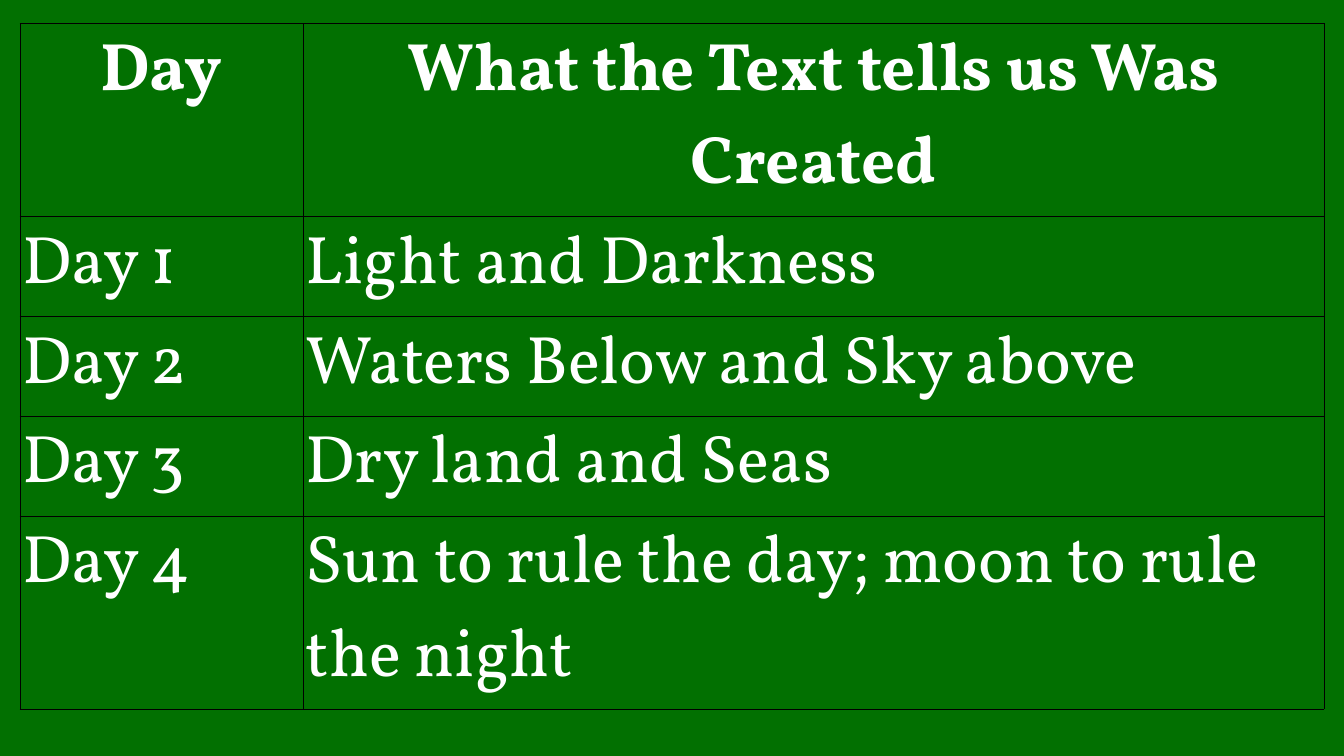
from dataclasses import dataclass

from lxml.etree import SubElement
from pptx import Presentation
from pptx.dml.color import RGBColor
from pptx.enum.text import PP_ALIGN
from pptx.oxml.ns import qn
from pptx.slide import Slide
from pptx.table import _Cell
from pptx.util import Inches, Pt


@dataclass(frozen=True)
class Theme:
    green: str = "027001"
    white: str = "FFFFFF"
    border: str = "000000"
    font: str = "Vollkorn"
    text_size: float = 96
    border_width: float = 0.35


@dataclass(frozen=True)
class DayRow:
    day: str
    created: str
    heading: bool = False


THEME = Theme()
ROWS = [
    DayRow("Day", "What the Text tells us Was Created", heading=True),
    DayRow("Day 1", "Light and Darkness"),
    DayRow("Day 2", "Waters Below and Sky above"),
    DayRow("Day 3", "Dry land and Seas"),
    DayRow("Day 4", "Sun to rule the day; moon to rule the night"),
]
COLUMN_WIDTHS = (5.62, 20.27)
ROW_HEIGHT = 1.85
CELL_MARGIN = 0.06


def draw_borders(cell: _Cell) -> None:
    properties = cell._tc.get_or_add_tcPr()
    for side in ("lnL", "lnR", "lnT", "lnB"):
        line = SubElement(properties, qn(f"a:{side}"), w=str(Pt(THEME.border_width)))
        fill = SubElement(line, qn("a:solidFill"))
        SubElement(fill, qn("a:srgbClr"), val=THEME.border)


def fill_cell(cell: _Cell, text: str, heading: bool) -> None:
    draw_borders(cell)
    cell.fill.solid()
    cell.fill.fore_color.rgb = RGBColor.from_string(THEME.green)
    for side in ("left", "right", "top", "bottom"):
        setattr(cell, f"margin_{side}", Inches(CELL_MARGIN))
    paragraph = cell.text_frame.paragraphs[0]
    paragraph.alignment = PP_ALIGN.CENTER if heading else PP_ALIGN.LEFT
    span = paragraph.add_run()
    span.text = text
    span.font.color.rgb = RGBColor.from_string(THEME.white)
    font_format = {"name": THEME.font, "size": Pt(THEME.text_size), "bold": heading}
    for name, value in font_format.items():
        setattr(span.font, name, value)


def draw_creation_table(page: Slide) -> None:
    table = page.shapes.add_table(
        len(ROWS), len(COLUMN_WIDTHS), Inches(0.39), Inches(0.46),
        Inches(sum(COLUMN_WIDTHS)), Inches(ROW_HEIGHT * len(ROWS)),
    ).table
    table.horz_banding = False
    for column, width in zip(table.columns, COLUMN_WIDTHS):
        column.width = Inches(width)
    for table_row, row in zip(table.rows, ROWS):
        table_row.height = Inches(ROW_HEIGHT)
        for cell, text in zip(table_row.cells, (row.day, row.created)):
            fill_cell(cell, text, row.heading)


def main() -> None:
    deck = Presentation()
    deck.slide_width, deck.slide_height = Inches(26.67), Inches(15)
    page = deck.slides.add_slide(deck.slide_layouts[6])
    page.background.fill.solid()
    page.background.fill.fore_color.rgb = RGBColor.from_string(THEME.green)
    draw_creation_table(page)
    deck.save("out.pptx")


if __name__ == "__main__":
    main()
